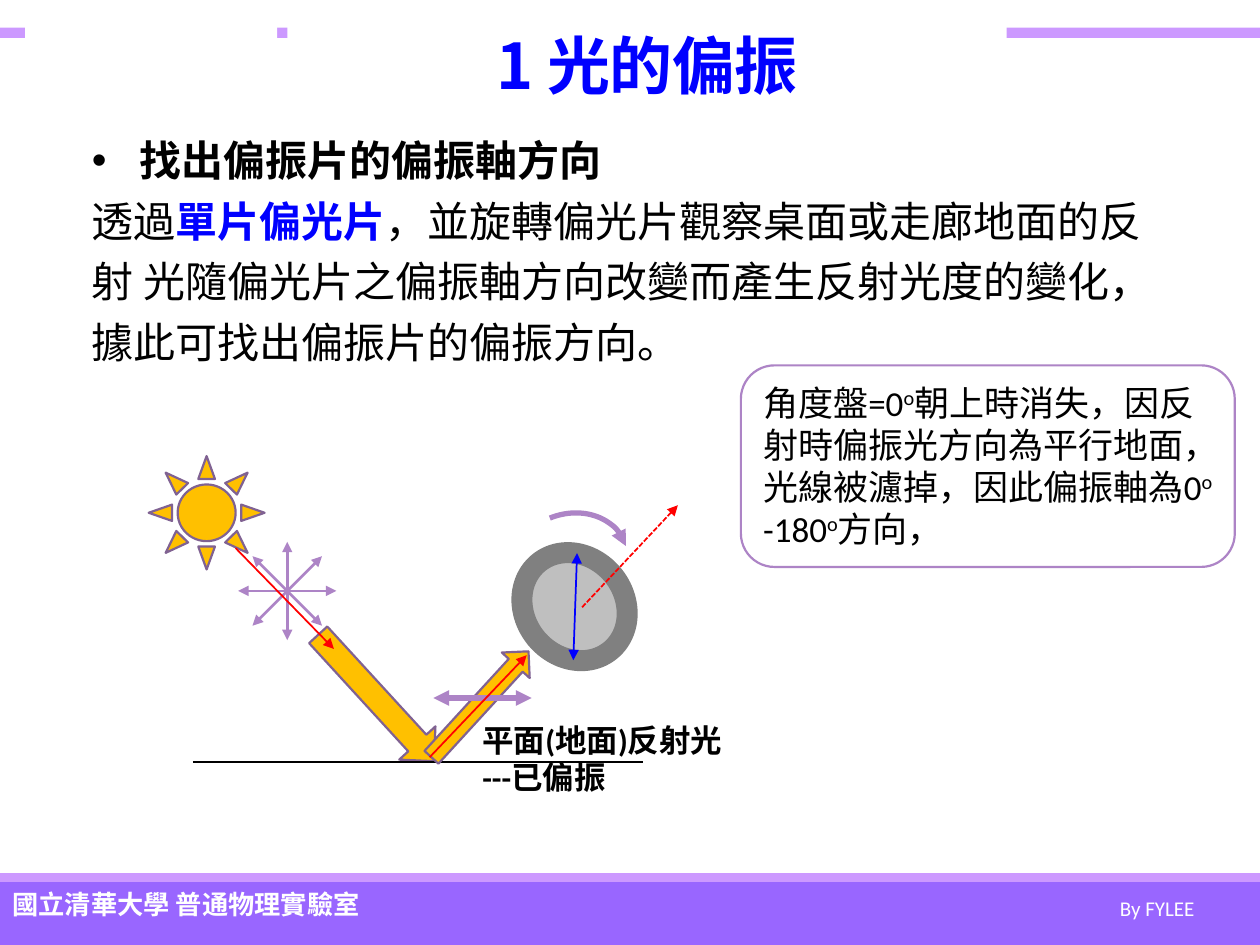
from dataclasses import dataclass
from math import cos, radians, sin

from lxml.etree import SubElement
from pptx import Presentation
from pptx.dml.color import RGBColor
from pptx.enum.dml import MSO_LINE as Dash
from pptx.enum.shapes import MSO_CONNECTOR as Link, MSO_SHAPE as Preset
from pptx.enum.text import MSO_ANCHOR as Anchor, MSO_AUTO_SIZE as Fit, PP_ALIGN as Align
from pptx.oxml.ns import qn
from pptx.util import Inches, Pt


@dataclass(frozen=True)
class Theme:
    """Colours, fonts and type sizes of the slide."""
    black: str = "000000"
    white: str = "FFFFFF"
    blue: str = "0000FF"
    red: str = "FF0000"
    violet: str = "9966FF"
    lilac: str = "CC99FF"
    mauve: str = "AD84C6"
    plum: str = "806292"
    gold: str = "FFC000"
    rim: str = "808080"
    glass: str = "BFBFBF"
    latin: str = "Calibri"
    cjk: str = "Noto Sans CJK SC"
    title: int = 36
    body: int = 24
    note: int = 20
    label: int = 18
    lab: int = 15
    author: int = 12


@dataclass(frozen=True)
class Box:
    """A region in grid columns and rows of a tenth of an inch."""
    left: float
    top: float
    width: float
    height: float

    def sub(self, x, y, width, height):
        """Return a region placed from this one's corner."""
        return Box(self.left + x, self.top + y, width, height)

    def point(self, x, y):
        """Return the grid position of an offset from the corner."""
        return self.left + x, self.top + y

    def emu(self):
        """Return left, top, width and height as lengths."""
        return [cell(v) for v in (self.left, self.top, self.width, self.height)]


THEME = Theme()


def cell(count):
    """Turn grid cells into a length."""
    return Inches(count / 10)


def rgb(colour):
    """Turn a hex string into a colour."""
    return RGBColor.from_string(colour)


def add_preset(shapes, preset, box, fill=None, line=None, width=1.25, rotation=0):
    """Add a preset shape with its fill, outline and rotation."""
    shape = shapes.add_shape(preset, *box.emu())
    shape.shadow.inherit = False
    shape.rotation = rotation
    if fill:
        shape.fill.solid()
        shape.fill.fore_color.rgb = rgb(fill)
    else:
        shape.fill.background()
    if line:
        shape.line.color.rgb = rgb(line)
        shape.line.width = Pt(width)
    else:
        shape.line.fill.background()
    return shape


def add_heads(shape, both=False):
    """Put triangle arrowheads on a line."""
    outline = shape.line._get_or_add_ln()
    for tag in ["a:headEnd", "a:tailEnd"][0 if both else 1:]:
        SubElement(outline, qn(tag), type="triangle")


def add_line(shapes, start, end, colour, width=1, dash=None):
    """Add a straight line between two grid points."""
    line = shapes.add_connector(Link.STRAIGHT, *map(cell, (*start, *end)))
    SubElement(line._element.spPr, qn("a:effectLst"))
    line.line.color.rgb = rgb(colour)
    line.line.width = Pt(width)
    if dash:
        line.line.dash_style = dash
    return line


def add_run(paragraph, words, size, colour=THEME.black, bold=False, font=THEME.latin, raised=False):
    """Add one formatted run to a paragraph."""
    run = paragraph.add_run()
    run.text = words
    run.font.size, run.font.bold, run.font.name = Pt(size), bold, font
    run.font.color.rgb = rgb(colour)
    props = run.font._element
    SubElement(props, qn("a:ea"), typeface=font)
    if raised:
        props.set("baseline", "30000")
    return run


def text_frame(shape, wrap=True):
    """Prepare a top-left text frame that grows with its text."""
    frame = shape.text_frame
    frame.word_wrap, frame.auto_size = wrap, Fit.SHAPE_TO_FIT_TEXT
    frame.vertical_anchor = Anchor.TOP
    frame.paragraphs[0].alignment = Align.LEFT
    return frame


def add_header(slide, box):
    """Draw the top band and set the title over it."""
    shapes = slide.shapes
    add_preset(shapes, Preset.RECTANGLE, box.sub(0, 2.2, box.width, 0.8), THEME.lilac)
    add_preset(shapes, Preset.RECTANGLE, box.sub(2, 0.6, 20, 4), THEME.white)
    title = shapes.title
    shapes._spTree.append(title._element)
    title.left, title.top, title.width, title.height = box.sub(22.8, 1.2, 57.1, 8.8).emu()
    title.fill.solid()
    title.fill.fore_color.rgb = rgb(THEME.white)
    frame = title.text_frame
    frame.auto_size, frame.vertical_anchor = Fit.NONE, Anchor.MIDDLE
    heading = frame.paragraphs[0]
    heading.alignment, heading.line_spacing = Align.CENTER, 0.85
    run = add_run(heading, "1 光的偏振", THEME.title, THEME.blue, True, THEME.cjk)
    run.font._element.set("spc", "-30")


def add_footer(slide, box):
    """Draw the bottom band with the laboratory and the author."""
    shapes = slide.shapes
    add_preset(shapes, Preset.RECTANGLE, box.sub(0, 0.7, box.width, 5), THEME.violet)
    add_preset(shapes, Preset.RECTANGLE, box.sub(0, 0, box.width, 0.7), THEME.lilac)
    lab = text_frame(shapes.add_textbox(*box.sub(0, 0.7, 29.9, 3.5).emu()), False)
    add_run(lab.paragraphs[0], "國立清華大學 普通物理實驗室", THEME.lab, THEME.white, True, THEME.cjk)
    author = text_frame(shapes.add_textbox(*box.sub(87.9, 1.3, 8, 3).emu()), False)
    add_run(author.paragraphs[0], "By FYLEE", THEME.author, THEME.white)


def add_body(slide, box):
    """Write the task and its explanation."""
    frame = text_frame(add_preset(slide.shapes, Preset.RECTANGLE, box, THEME.white))
    task, method = frame.paragraphs[0], frame.add_paragraph()
    method.alignment = Align.LEFT
    task.line_spacing = method.line_spacing = 1.2
    props = task._p.get_or_add_pPr()
    props.set("marL", str(cell(3.75)))
    props.set("indent", str(-cell(3.75)))
    SubElement(props, qn("a:buFont"), typeface="Arial")
    SubElement(props, qn("a:buChar"), char="•")
    add_run(task, "找出偏振片的偏振軸方向", THEME.body, bold=True)
    add_run(method, "透過", THEME.body)
    add_run(method, "單片偏光片", THEME.body, THEME.blue, True)
    add_run(method, "，並旋轉偏光片觀察桌面或走廊地面的反射 光隨偏光片之偏振軸方向改變而產生"
                    "反射光度的變化，據此可找出偏振片的偏振方向。", THEME.body)


def add_note(slide, box):
    """Write the rounded note, with raised degree signs between its parts."""
    card = add_preset(slide.shapes, Preset.ROUNDED_RECTANGLE, box, THEME.white, THEME.mauve)
    paragraph = text_frame(card).paragraphs[0]
    parts = ["角度盤=0", "朝上時消失，因反射時偏振光方向為平行地面，光線被濾掉，因此偏振軸為0",
             " -180", "方向，"]
    for index, words in enumerate(parts):
        if index:
            add_run(paragraph, "o", THEME.note, raised=True)
        add_run(paragraph, words, THEME.note)


def add_unpolarised(shapes, centre, radius):
    """Draw the star of double arrows for unpolarised light."""
    star = shapes.add_group_shape().shapes
    for angle in range(0, 180, 45):
        dx, dy = radius * cos(radians(angle)), radius * sin(radians(angle))
        ray = add_line(star, (centre[0] + dx, centre[1] + dy),
                       (centre[0] - dx, centre[1] - dy), THEME.mauve, 1.5)
        add_heads(ray, both=True)


def add_experiment(slide, box):
    """Draw sunlight reflected from the ground through a polariser."""
    shapes = slide.shapes
    add_preset(shapes, Preset.OVAL, box.sub(31.1, 9.2, 9, 7.9), THEME.glass, THEME.rim, 12, 50.7)
    add_preset(shapes, Preset.SUN, box.sub(1.8, 1.2, 9.2, 9), THEME.gold, THEME.plum)
    add_preset(shapes, Preset.DOWN_ARROW, box.sub(17.9, 13.6, 3.9, 13.6), THEME.gold, THEME.plum,
               rotation=317.5)
    add_line(shapes, box.point(5.3, 25.5), box.point(41, 25.5), THEME.black)
    reflected = add_preset(shapes, Preset.DOWN_ARROW, box.sub(26.6, 15.2, 3, 11.4), THEME.gold,
                           THEME.plum, rotation=42.5)
    reflected._element.spPr.xfrm.set("flipV", "1")
    turn = add_preset(shapes, Preset.ARC, box.sub(30.5, 5.8, 9.4, 7.9), None, THEME.mauve, 3, 340.1)
    turn.adjustments[0], turn.adjustments[1] = 160, 1.42
    add_heads(turn)

    caption = text_frame(shapes.add_textbox(*box.sub(27.3, 21.7, 21.3, 7.1).emu()))
    add_run(caption.paragraphs[0], "平面(地面)反射光", THEME.label, bold=True)
    add_run(caption.add_paragraph(), "---已偏振", THEME.label, bold=True)

    add_unpolarised(shapes, box.point(12.8, 11.9), 3.9)
    arrows = [
        ((8.7, 8.5), (16.5, 16.5), THEME.red, 1, None, False),
        ((32.2, 20.4), (24.4, 20.4), THEME.mauve, 3, None, True),
        ((35.5, 17.4), (35.8, 8.9), THEME.blue, 1, None, True),
        ((24.1, 25.1), (31.8, 17), THEME.red, 1, None, False),
        ((36.2, 13.2), (43.8, 5.1), THEME.red, 1, Dash.SQUARE_DOT, False),
    ]
    for start, end, colour, width, dash, both in arrows:
        add_heads(add_line(shapes, box.point(*start), box.point(*end), colour, width, dash), both)


def main():
    """Build the slide and save it."""
    deck = Presentation()
    deck.slide_width, deck.slide_height = cell(100), cell(75)
    slide = deck.slides.add_slide(deck.slide_layouts[5])
    add_footer(slide, Box(0, 69.3, 100, 5.7))
    add_header(slide, Box(0, 0, 100, 10))
    add_body(slide, Box(6.3, 9.4, 87.5, 20))
    add_note(slide, Box(58.8, 29, 39.2, 16))
    add_experiment(slide, Box(10, 35, 49, 32))
    deck.save("out.pptx")


if __name__ == "__main__":
    main()
